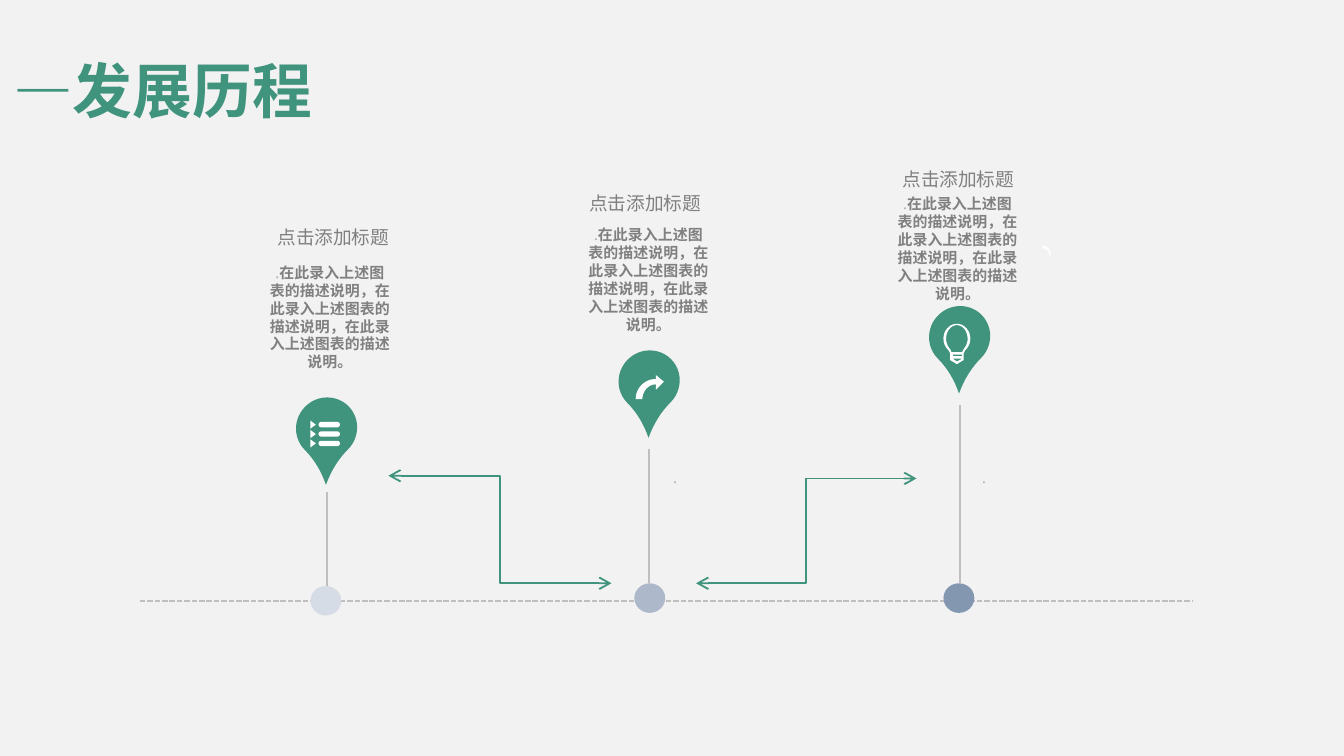
"""Build the development-history timeline slide."""
from dataclasses import dataclass
from math import cos, radians, sin

from lxml.etree import SubElement
from pptx import Presentation
from pptx.dml.color import RGBColor
from pptx.enum.dml import MSO_LINE
from pptx.enum.shapes import MSO_CONNECTOR, MSO_SHAPE
from pptx.enum.text import PP_ALIGN
from pptx.oxml.ns import qn
from pptx.util import Inches, Pt


@dataclass(frozen=True)
class Theme:
    paper: str = "F2F2F2"
    green: str = "40937D"
    white: str = "FFFFFF"
    rule: str = "BFBFBF"
    text: str = "808080"
    faint: str = "A6A6A6"
    cjk: str = "Noto Sans CJK SC"
    latin: str = "Open Sans"
    title_size: int = 32
    label_size: int = 10
    body_size: int = 8
    leading: float = 1.2
    line_width: float = 1


THEME = Theme()
TITLE = dict(size=Pt(THEME.title_size), name=THEME.cjk, bold=True, color=THEME.green)
LABEL = dict(size=Pt(THEME.label_size), name=THEME.cjk, bold=False, color=THEME.text)
BODY = dict(size=Pt(THEME.body_size), name=THEME.cjk, bold=True, color=THEME.text)
DOT = dict(size=Pt(THEME.body_size), name=THEME.latin, bold=False, color=THEME.faint)

LABEL_TEXT = "点击添加标题"
BODY_TEXT = "在此录入上述图表的描述说明，" * 2 + "在此录入上述图表的描述说明。"


def arc(cx, cy, rx, ry, start, end, steps=16):
    """Return points along an elliptical arc, with angles in degrees."""
    angles = [radians(start + (end - start) * i / steps) for i in range(steps + 1)]
    return [(cx + rx * cos(a), cy + ry * sin(a)) for a in angles]


def list_icon():
    """Return three rows, each with a pointer and a bar."""
    contours = []
    for row in range(3):
        y = 3.16 + 0.07 * row
        contours.append([(2.31, y - 0.03), (2.35, y), (2.31, y + 0.03)])
        contours.append(arc(2.39, y, 0.02, 0.02, 90, 270, 6)
                        + arc(2.51, y, 0.02, 0.02, -90, 90, 6))
    return contours


def arrow_icon():
    """Return a curved arrow that points right."""
    return [arc(4.88, 2.97, 0.15, 0.15, 180, 270)
            + [(4.88, 2.79), (4.94, 2.84), (4.88, 2.9)]
            + arc(4.88, 2.97, 0.1, 0.11, 270, 180)]


def bulb_icon():
    """Return a light bulb outline with its openings."""
    return [
        arc(7.12, 2.52, 0.1, 0.11, 130, 410, 32)
        + [(7.17, 2.63), (7.17, 2.68), (7.12, 2.71), (7.07, 2.68), (7.07, 2.63)],
        arc(7.12, 2.52, 0.08, 0.1, 130, 410, 32) + [(7.16, 2.62), (7.08, 2.62)],
        [(7.09, 2.64), (7.16, 2.64), (7.16, 2.65), (7.09, 2.65)],
        [(7.09, 2.67), (7.16, 2.67), (7.12, 2.69)],
    ]


class Deck:
    """Hold the theme, the current slide and the shapes being drawn into."""

    def __init__(self, prs, theme):
        self.theme = theme
        self.s = prs.slides.add_slide(prs.slide_layouts[6])
        self.shapes = self.s.shapes
        self.paint(self.s.background, theme.paper)

    def paint(self, target, color):
        """Give a target a solid fill."""
        target.fill.solid()
        target.fill.fore_color.rgb = RGBColor.from_string(color)

    def group(self):
        """Start a group for the elements that follow."""
        self.shapes = self.s.shapes.add_group_shape().shapes

    def ungroup(self):
        """Return to the slide itself."""
        self.shapes = self.s.shapes

    def text(self, box, runs, align=PP_ALIGN.LEFT, wrap=True):
        """Add one paragraph of formatted runs."""
        tf = self.shapes.add_textbox(*map(Inches, box)).text_frame
        tf.word_wrap = wrap
        p = tf.paragraphs[0]
        p.alignment = align
        p.line_spacing = Pt(runs[-1][1]["size"].pt * self.theme.leading)
        for content, style in runs:
            r = p.add_run()
            r.text = content
            for key, value in style.items():
                if key == "color":
                    r.font.color.rgb = RGBColor.from_string(value)
                else:
                    setattr(r.font, key, value)
            SubElement(r.font._element, qn("a:ea"), typeface=style["name"])

    def shape(self, kind, box, color, rotation=0, adjust=None):
        """Add a filled preset shape."""
        sp = self.shapes.add_shape(kind, *map(Inches, box))
        sp.shadow.inherit = False
        sp.rotation = rotation
        if adjust is not None:
            sp.adjustments[0] = adjust
        self.paint(sp, color)
        sp.line.fill.background()

    def outline(self, contours, color):
        """Add one freeform made of closed contours."""
        points = [[(x * 1000, y * 1000) for x, y in c] for c in contours]
        builder = self.shapes.build_freeform(*points[0][0], scale=Inches(1) / 1000)
        builder.add_line_segments(points[0][1:], close=True)
        for contour in points[1:]:
            builder.move_to(*contour[0])
            builder.add_line_segments(contour[1:], close=True)
        sp = builder.convert_to_shape()
        sp.shadow.inherit = False
        self.paint(sp, color)
        sp.line.fill.background()

    def line(self, start, end, color, kind=MSO_CONNECTOR.STRAIGHT, dash=None, arrows=False):
        """Add a connector, with open arrowheads if asked."""
        sp = self.shapes.add_connector(kind, *map(Inches, start + end))
        sp.line.color.rgb = RGBColor.from_string(color)
        sp.line.width = Pt(self.theme.line_width)
        if dash:
            sp.line.dash_style = dash
        if arrows:
            for tag in ("a:headEnd", "a:tailEnd"):
                SubElement(sp.line._get_or_add_ln(), qn(tag), type="arrow")
        SubElement(sp._element.spPr, qn("a:effectLst"))

    def milestone(self, dot, color, stem, label, body, pin, icon, mark=None):
        """Add a timeline dot with its stem, texts, pin and icon."""
        self.group()
        self.shape(MSO_SHAPE.OVAL, dot + (0.23, 0.22), color)
        x, top = stem
        self.line((x, top), (x, dot[1]), self.theme.rule)
        if mark:
            self.text(mark + (1.09, 0.24), [(".", DOT)])
        self.text(label + (1.04, 0.27), [(LABEL_TEXT, LABEL)], PP_ALIGN.CENTER, wrap=False)
        self.text(body + (1.09, 1.04), [(".", DOT), (BODY_TEXT, BODY)], PP_ALIGN.CENTER)
        self.shape(MSO_SHAPE.TEAR, pin + (0.46, 0.45), self.theme.green, 135, 1.316)
        self.outline(icon, self.theme.white)
        self.ungroup()


def main():
    """Build and save the slide."""
    prs = Presentation()
    prs.slide_width, prs.slide_height = Inches(10), Inches(10 * 9 / 16)
    deck = Deck(prs, THEME)
    deck.text((0, 0.35, 2.5, 0.64), [("—发展历程", TITLE)])
    deck.line((1.04, 4.47), (8.87, 4.47), THEME.rule, dash=MSO_LINE.SQUARE_DOT)
    deck.milestone((2.31, 4.36), "D6DCE5", (2.43, 3.66), (1.96, 1.63), (1.91, 1.91),
                   (2.2, 2.96), list_icon())
    deck.milestone((4.72, 4.34), "ADB9CA", (4.83, 3.34), (4.28, 1.38), (4.28, 1.63),
                   (4.6, 2.61), arrow_icon(), (4.91, 3.44))
    deck.milestone((7.02, 4.34), "8497B0", (7.14, 3.01), (6.61, 1.2), (6.58, 1.4),
                   (6.91, 2.28), bulb_icon(), (7.21, 3.44))
    deck.outline([arc(7.76, 1.9, 0.06, 0.07, 270, 360)
                  + arc(7.76, 1.9, 0.05, 0.05, 360, 270)], THEME.white)
    for start, end in (((2.89, 3.54), (4.55, 4.34)), ((6.82, 3.56), (5.18, 4.34))):
        deck.line(start, end, THEME.green, MSO_CONNECTOR.ELBOW, arrows=True)
    prs.save("out.pptx")


if __name__ == "__main__":
    main()
